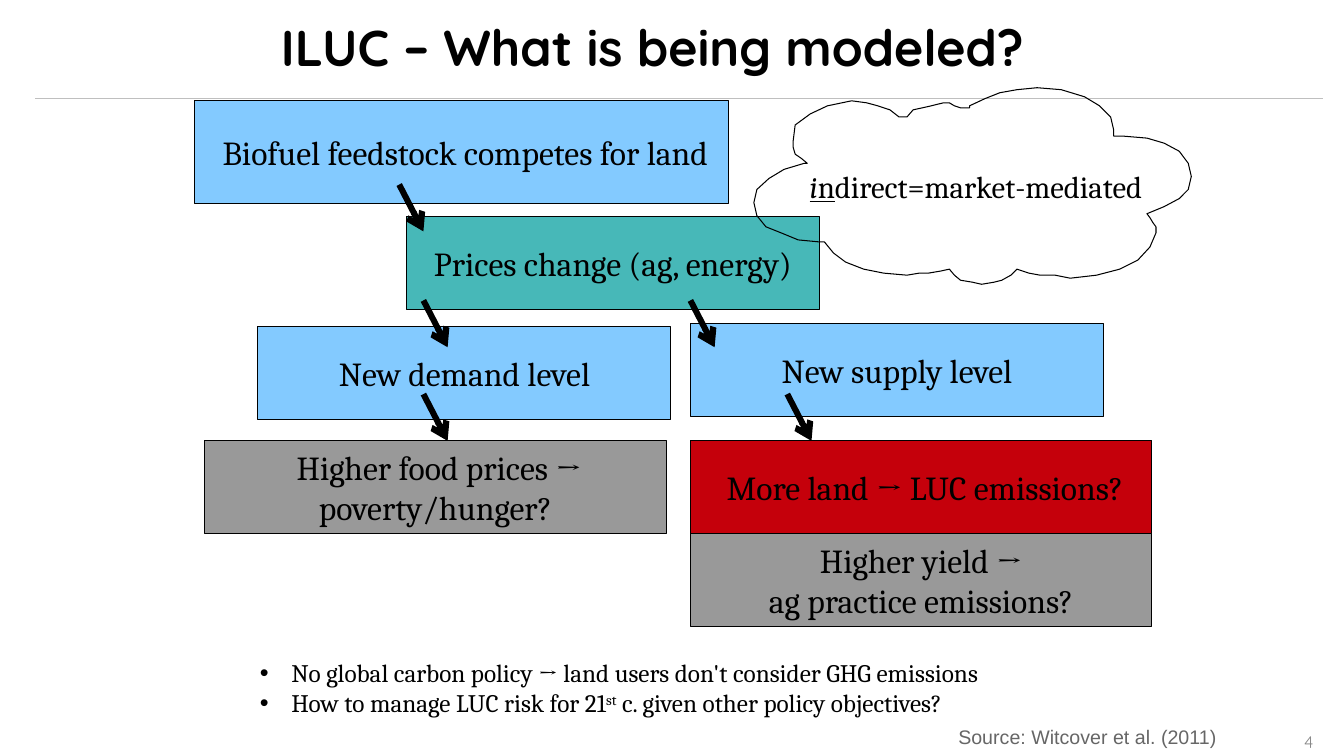
from lxml import etree
from pptx import Presentation
from pptx.dml.color import RGBColor
from pptx.enum import shapes, text
from pptx.oxml import ns
from pptx.util import Cm, Pt

COLORS = {
    "black": "000000", "rule": "BFBFBF", "number": "888888", "source": "666666",
    "blue": "83CAFF", "teal": "47B8B8", "gray": "999999", "red": "C5000B",
}

TITLE = "ILUC – What is being modeled?"
SOURCE = "Source: Witcover et al. (2011)"
PAGE = "4"

# text lines, fill, (left, top, width, height) in cm
BOXES = [
    (["Prices change (ag, energy)"], "teal", (10.24, 5.46, 10.41, 2.34)),
    (["New supply level"], "blue", (17.4, 8.15, 10.41, 2.34)),
    (["New demand level"], "blue", (6.5, 8.23, 10.41, 2.34)),
    ([" Higher food prices → poverty/hunger?"], "gray", (5.16, 11.1, 11.63, 2.34)),
    ([" More land → LUC emissions?"], "red", (17.4, 11.1, 11.63, 2.34)),
    (["Higher yield →", "ag practice emissions?"], "gray", (17.4, 13.44, 11.63, 2.34)),
    ([" Biofuel feedstock competes for land"], "blue", (4.9, 2.54, 13.46, 2.59)),
]

ARROW_STARTS = [(10.06, 4.65), (10.67, 7.57), (17.4, 7.57), (10.67, 9.93), (19.84, 9.93)]
ARROW_STEP = (0.61, 1.18)

# A run is plain text or (text, format)
CLOUD_TEXT = [[" ", ("i", {"italic": True, "underline": True}),
               ("n", {"underline": True}), "direct=market-mediated"]]
BULLETS = [
    ["No global carbon policy → land users don't consider GHG emissions"],
    ["How to manage LUC risk for 21", ("st", {"raised": True}),
     " c. given other policy objectives?"],
]

# Cloud outline in hundredths of an inch
CLOUD = [
    (1138, 212), (1141, 216), (1144, 221), (1147, 225), (1147, 231), (1141, 245),
    (1129, 258), (1111, 267), (1088, 273), (1062, 276), (1047, 273), (1032, 273),
    (1021, 271), (1009, 267), (1003, 273), (994, 278), (986, 280), (974, 282),
    (965, 280), (953, 278), (947, 273), (942, 267), (933, 269), (921, 271),
    (912, 271), (900, 273), (877, 271), (857, 267), (839, 260), (827, 251),
    (818, 240), (813, 240), (792, 238), (775, 231), (760, 225), (751, 214),
    (748, 201), (751, 188), (763, 177), (778, 168), (798, 162), (801, 162),
    (795, 157), (789, 153), (787, 146), (787, 140), (789, 124), (804, 113),
    (821, 105), (845, 100), (860, 102), (871, 105), (883, 109), (892, 116),
    (900, 116), (906, 109), (915, 107), (924, 105), (936, 102), (942, 102),
    (947, 105), (953, 107), (962, 107), (962, 105), (977, 98), (992, 92),
    (1009, 89), (1029, 87), (1053, 89), (1076, 96), (1091, 105), (1102, 116),
    (1105, 129), (1105, 135), (1114, 135), (1138, 137), (1155, 142), (1170, 150),
    (1179, 162), (1182, 175), (1179, 188), (1170, 197), (1155, 205),
]
CLOUD_UNIT = Cm(2.54) / 100


def color(name):
    return RGBColor.from_string(COLORS[name])


def place(shape, left, top, width, height):
    shape.left, shape.top = Cm(left), Cm(top)
    shape.width, shape.height = Cm(width), Cm(height)


def write(shape, paragraphs, size, font="Cambria", ink="black", bold=False,
          align=text.PP_ALIGN.CENTER, anchor=text.MSO_ANCHOR.MIDDLE,
          line_spacing=1.0, inset=(0.25, 0.13), indent=None):
    """Fill a shape with paragraphs, each a list of runs; indent adds bullets."""
    frame = shape.text_frame
    frame.word_wrap = True
    frame.auto_size = text.MSO_AUTO_SIZE.NONE
    frame.vertical_anchor = anchor
    frame.margin_left = frame.margin_right = Cm(inset[0])
    frame.margin_top = frame.margin_bottom = Cm(inset[1])
    for index, runs in enumerate(paragraphs):
        paragraph = frame.paragraphs[0] if index == 0 else frame.add_paragraph()
        paragraph.alignment = align
        paragraph.line_spacing = line_spacing
        paragraph.space_before = paragraph.space_after = Pt(0)
        if indent:
            properties = paragraph._p.get_or_add_pPr()
            properties.set("marL", str(Cm(indent)))
            properties.set("indent", str(-Cm(indent)))
            etree.SubElement(properties, ns.qn("a:buChar")).set("char", "•")
        for item in runs:
            words, style = (item, {}) if isinstance(item, str) else item
            run = paragraph.add_run()
            run.text = words
            run.font.name, run.font.size = font, Pt(size)
            run.font.bold = bold
            run.font.italic = style.get("italic")
            run.font.underline = style.get("underline")
            run.font.color.rgb = color(ink)
            if style.get("raised"):
                run._r.get_or_add_rPr().set("baseline", "30000")


def outline(shape, fill=None):
    shape.shadow.inherit = False
    if fill:
        shape.fill.solid()
        shape.fill.fore_color.rgb = color(fill)
    else:
        shape.fill.background()
    shape.line.color.rgb = color("black")
    shape.line.width = Pt(0)


def add_line(slide, start, end, ink, width, arrow=False):
    line = slide.shapes.add_connector(
        shapes.MSO_CONNECTOR.STRAIGHT, *[Cm(value) for value in (*start, *end)])
    line.line.color.rgb = color(ink)
    line.line.width = Pt(width)
    if arrow:
        etree.SubElement(line.line._get_or_add_ln(), ns.qn("a:tailEnd")).set("type", "arrow")
    etree.SubElement(line._element.spPr, ns.qn("a:effectLst"))


def add_label(slide, words, bounds, **style):
    label = slide.shapes.add_textbox(0, 0, 0, 0)
    place(label, *bounds)
    write(label, [[words]], **style)


def main():
    presentation = Presentation()
    presentation.slide_width, presentation.slide_height = Cm(33.87), Cm(19.05)
    slide = presentation.slides.add_slide(presentation.slide_layouts[1])

    add_line(slide, (0.89, 2.49), (33.35, 2.49), "rule", 0.75)
    title, body = slide.placeholders
    place(title, 3.84, 0.56, 25.2, 1.4)
    write(title, [[TITLE]], 36, font="Quicksand", bold=True, line_spacing=0.9, inset=(0, 0))

    for lines, fill, bounds in BOXES:
        box = slide.shapes.add_shape(shapes.MSO_SHAPE.RECTANGLE, 0, 0, 0, 0)
        place(box, *bounds)
        outline(box, fill)
        write(box, [[line] for line in lines], 24)

    for left, top in ARROW_STARTS:
        end = (left + ARROW_STEP[0], top + ARROW_STEP[1])
        add_line(slide, (left, top), end, "black", 4.31, arrow=True)

    builder = slide.shapes.build_freeform(*CLOUD[0], scale=CLOUD_UNIT)
    builder.add_line_segments(CLOUD[1:], close=True)
    cloud = builder.convert_to_shape()
    outline(cloud)
    write(cloud, CLOUD_TEXT, 22)

    place(body, 6.3, 16.43, 22.71, 1.73)
    write(body, BULLETS, 18, align=text.PP_ALIGN.LEFT,
          anchor=text.MSO_ANCHOR.TOP, indent=0.79)
    add_label(slide, SOURCE, (23.9, 18.14, 7.21, 0.84), size=14, font="Arial",
              ink="source", align=text.PP_ALIGN.LEFT, anchor=text.MSO_ANCHOR.TOP)
    add_label(slide, PAGE, (31.55, 18.34, 1.8, 0.71), size=12, font="Quicksand",
              ink="number", align=text.PP_ALIGN.RIGHT)
    presentation.save("out.pptx")


if __name__ == "__main__":
    main()
